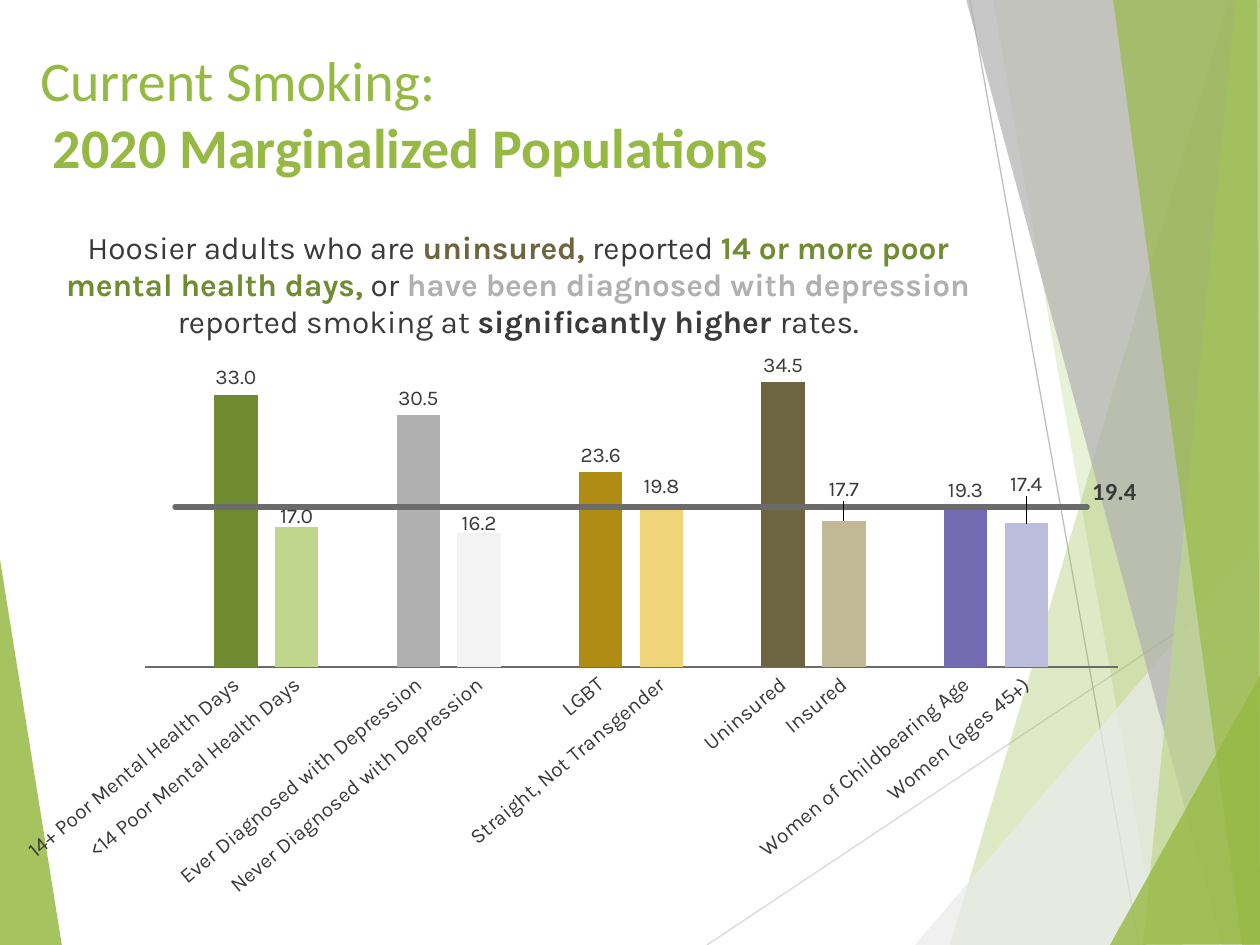
from dataclasses import dataclass
from typing import Optional

import pptx
import pptx.chart.data
import pptx.dml.color
import pptx.enum.chart
import pptx.enum.shapes
import pptx.oxml
import pptx.oxml.ns
import pptx.util
from pptx.dml.color import RGBColor

PX = 914400 / 126  # EMU in one px
WIDTH, HEIGHT = 1260, 945

GREEN = RGBColor(0x96, 0xB9, 0x43)
DARK_GREEN = RGBColor(0x70, 0x8B, 0x32)
LIGHT_GREEN = RGBColor(0xC0, 0xD6, 0x8D)
GRAY = RGBColor(0xB0, 0xB0, 0xB0)
PALE_GRAY = RGBColor(0xF3, 0xF3, 0xF3)
MIST = RGBColor(0xEB, 0xEB, 0xEB)
HAIRLINE_LIGHT = RGBColor(0xD9, 0xD9, 0xD9)
HAIRLINE = RGBColor(0xBF, 0xBF, 0xBF)
MID_GRAY = RGBColor(0x6B, 0x6B, 0x6B)
INK = RGBColor(0x3A, 0x3A, 0x3A)
GOLD = RGBColor(0xAF, 0x8C, 0x14)
LIGHT_GOLD = RGBColor(0xF0, 0xD5, 0x78)
BROWN = RGBColor(0x6D, 0x65, 0x40)
TAN = RGBColor(0xC1, 0xB9, 0x95)
PURPLE = RGBColor(0x75, 0x6B, 0xB1)
LILAC = RGBColor(0xBC, 0xBD, 0xDC)


@dataclass
class Facet:
    points: list[tuple[int, int]]
    color: RGBColor
    opacity: int


@dataclass
class Hairline:
    start: tuple[int, int]
    end: tuple[int, int]
    color: RGBColor


@dataclass
class Bar:
    name: str
    rate: float
    color: RGBColor
    label_shift: Optional[float] = None


@dataclass
class Words:
    text: str
    color: RGBColor = INK
    bold: bool = False


HAIRLINES = [
    Hairline((707, 945), (1261, 576), HAIRLINE_LIGHT),
    Hairline((970, 0), (1139, 945), HAIRLINE),
]
LEFT_FACET = Facet([(-1, 553), (62, 946), (-1, 945)], GREEN, 85)
RIGHT_FACETS = [
    Facet([(1229, 0), (950, 945), (1262, 946), (1261, 1)], GREEN, 30),
    Facet([(993, -1), (1158, 945), (1261, 945), (1261, -1)], GREEN, 20),
    Facet([(915, 945), (1260, 541), (1261, 945)], MIST, 72),
    Facet([(966, -1), (1222, 945), (1261, 944), (1261, -1)], GRAY, 70),
    Facet([(1236, -1), (1143, 945), (1261, 945), (1260, -1)], LIGHT_GREEN, 70),
    Facet([(1113, -1), (1242, 945), (1260, 945), (1257, -1)], GREEN, 65),
    Facet([(1110, 945), (1261, 674), (1261, 944)], GREEN, 80),
]
BAR_PAIRS = [
    (Bar("14+ Poor Mental Health Days", 33.0, DARK_GREEN),
     Bar("<14 Poor Mental Health Days", 17.0, LIGHT_GREEN, 0.01)),
    (Bar("Ever Diagnosed with Depression", 30.5, GRAY),
     Bar("Never Diagnosed with Depression", 16.2, PALE_GRAY, 0.01)),
    (Bar("LGBT", 23.6, GOLD),
     Bar("Straight, Not Transgender", 19.8, LIGHT_GOLD)),
    (Bar("Uninsured", 34.5, BROWN),
     Bar("Insured", 17.7, TAN, -0.02)),
    (Bar("Women of Childbearing Age", 19.3, PURPLE),
     Bar("Women (ages 45+)", 17.4, LILAC, -0.03)),
]
STATE_RATE = 19.4
MESSAGE = [
    Words("Hoosier adults who are "),
    Words("uninsured,", BROWN, True),
    Words(" reported "),
    Words("14 or more poor mental health days,", DARK_GREEN, True),
    Words(" or "),
    Words("have been diagnosed with depression", GRAY, True),
    Words(" reported smoking at "),
    Words("significantly higher", INK, True),
    Words(" rates."),
]


def px(length: int) -> int:
    return round(length * PX)


def style(font, name: str, size: int, color: RGBColor, bold: bool = False) -> None:
    font.name, font.size, font.bold = name, pptx.util.Pt(size), bold
    font.color.rgb = color


def add_span(para, words: Words, name: str, size: int) -> None:
    span = para.add_run()
    span.text = words.text
    style(span.font, name, size, words.color, words.bold)


def draw_facet(page, facet: Facet) -> None:
    builder = page.shapes.build_freeform(*facet.points[0], scale=PX)
    builder.add_line_segments(facet.points[1:], close=True)
    shape = builder.convert_to_shape()
    shape.shadow.inherit = False
    shape.fill.solid()
    shape.fill.fore_color.rgb = facet.color
    shape.line.fill.background()
    color = shape._element.spPr.find(".//" + pptx.oxml.ns.qn("a:srgbClr"))
    pptx.oxml.ns  # namespace helpers serve every XML edit below
    add_child(color, "a:alpha", val=facet.opacity * 1000)


def draw_hairline(page, hairline: Hairline) -> None:
    ends = [px(value) for value in hairline.start + hairline.end]
    line = page.shapes.add_connector(pptx.enum.shapes.MSO_CONNECTOR.STRAIGHT, *ends)
    line.line.color.rgb = hairline.color
    line.line.width = pptx.util.Pt(0.75)
    add_child(line._element.spPr, "a:effectLst")


def add_child(parent, tag: str, **attributes):
    child = pptx.oxml.parse_xml(f"<{tag} {pptx.oxml.ns.nsdecls(tag.split(':')[0])}/>")
    for key, value in attributes.items():
        child.set(key, str(value))
    parent.append(child)
    return child


def set_layout(parent, index: int, **values) -> None:
    for old in parent.findall(pptx.oxml.ns.qn("c:layout")):
        parent.remove(old)
    layout = add_child(parent, "c:layout")
    manual = add_child(layout, "c:manualLayout")
    for tag, value in values.items():
        add_child(manual, f"c:{tag}", val=value)
    parent.insert(index, layout)


def shift_label(label, shift: float) -> None:
    set_layout(label._dLbl, 1, x=0, y=shift)


def split_off_line(chart) -> None:
    """Move the second series of the column chart to a line chart on the same axes."""
    columns = chart.plots[0]._element
    series = columns.findall(pptx.oxml.ns.qn("c:ser"))[1]
    for flag in series.findall(pptx.oxml.ns.qn("c:invertIfNegative")):
        series.remove(flag)
    lines = add_child(columns.getparent(), "c:lineChart")
    columns.addnext(lines)
    add_child(lines, "c:grouping", val="standard")
    add_child(lines, "c:varyColors", val=0)
    lines.append(series)
    add_child(lines, "c:marker", val=1)
    for axis in columns.findall(pptx.oxml.ns.qn("c:axId")):
        add_child(lines, "c:axId", val=axis.get("val"))


def draw_chart(page) -> None:
    # An empty slot comes before each pair and after the last
    slots: list[Optional[Bar]] = [bar for pair in BAR_PAIRS for bar in (None, *pair)] + [None]
    chart_data = pptx.chart.data.CategoryChartData(number_format="0.0")
    chart_data.categories = [bar.name if bar else "" for bar in slots]
    chart_data.add_series("Series 1", [bar.rate if bar else None for bar in slots])
    chart_data.add_series("Series 2", [STATE_RATE] * len(slots))
    chart = page.shapes.add_chart(
        pptx.enum.chart.XL_CHART_TYPE.COLUMN_CLUSTERED,
        px(-32), px(203), px(1178), px(724), chart_data).chart
    style(chart.font, "Calibri", 10, INK)
    chart.has_legend = False
    split_off_line(chart)
    columns, lines = chart.plots
    columns.gap_width = 40
    columns.vary_by_categories = False
    set_layout(columns._element.getparent(), 0, layoutTarget="inner", xMode="edge",
               yMode="edge", x=0.15, y=0.185, w=0.826, h=0.456)

    # Axes
    names, rates = chart.category_axis, chart.value_axis
    names.major_tick_mark = pptx.enum.chart.XL_TICK_MARK.NONE
    names.format.line.color.rgb = MID_GRAY
    names.format.line.width = pptx.util.Pt(0.75)
    style(names.tick_labels.font, "Karla", 12, INK)
    names._element.find(".//" + pptx.oxml.ns.qn("a:bodyPr")).set("rot", "-2400000")
    rates.minimum_scale, rates.maximum_scale = 0, 40
    rates.has_major_gridlines = False
    rates.visible = False

    # Columns and their labels
    outside = pptx.enum.chart.XL_LABEL_POSITION.OUTSIDE_END
    series = columns.series[0]
    series.format.fill.solid()
    series.format.fill.fore_color.rgb = GREEN
    labels = series.data_labels
    labels.show_value = True
    labels.number_format, labels.number_format_is_linked = "0.0", False
    labels.position = outside
    style(labels.font, "Karla", 12, INK)
    for index, bar in enumerate(slots):
        if bar is None:
            continue
        point = series.points[index]
        point.format.fill.solid()
        point.format.fill.fore_color.rgb = bar.color
        if bar.label_shift is not None:
            style(point.data_label.font, "Karla", 12, INK)
            point.data_label.position = outside
            shift_label(point.data_label, bar.label_shift)

    # State rate line, labelled at its right end
    state = lines.series[0]
    state.smooth = False
    state.marker.style = pptx.enum.chart.XL_MARKER_STYLE.NONE
    state.format.line.color.rgb = MID_GRAY
    state.format.line.width = pptx.util.Pt(3)
    state.format.line._get_or_add_ln().set("cap", "rnd")
    state.data_labels.show_value = False
    label = state.points[len(slots) - 1].data_label
    style(label.font, "Calibri", 14, INK, True)
    label.position = pptx.enum.chart.XL_LABEL_POSITION.RIGHT
    shift_label(label, -0.02)

    # Message above the columns
    chart.has_title = True
    para = chart.chart_title.text_frame.paragraphs[0]
    for words in MESSAGE:
        add_span(para, words, "Karla", 18)
    set_layout(chart.chart_title._element, 1, xMode="edge", yMode="edge", x=0.08, y=0.03)


def draw_title(page) -> None:
    box = page.shapes.add_textbox(px(28), px(39), px(905), px(181))
    box.text_frame.word_wrap = True
    para = box.text_frame.paragraphs[0]
    add_span(para, Words("Current Smoking:", GREEN), "Calibri", 32)
    para.add_line_break()
    add_span(para, Words(" 2020 Marginalized Populations", GREEN, True), "Calibri", 32)


def main() -> None:
    deck = pptx.Presentation()
    deck.slide_width, deck.slide_height = px(WIDTH), px(HEIGHT)
    page = deck.slides.add_slide(deck.slide_layouts[6])

    # Backdrop
    draw_facet(page, LEFT_FACET)
    for hairline in HAIRLINES:
        draw_hairline(page, hairline)
    for facet in RIGHT_FACETS:
        draw_facet(page, facet)

    draw_title(page)
    draw_chart(page)
    deck.save("out.pptx")


if __name__ == "__main__":
    main()
